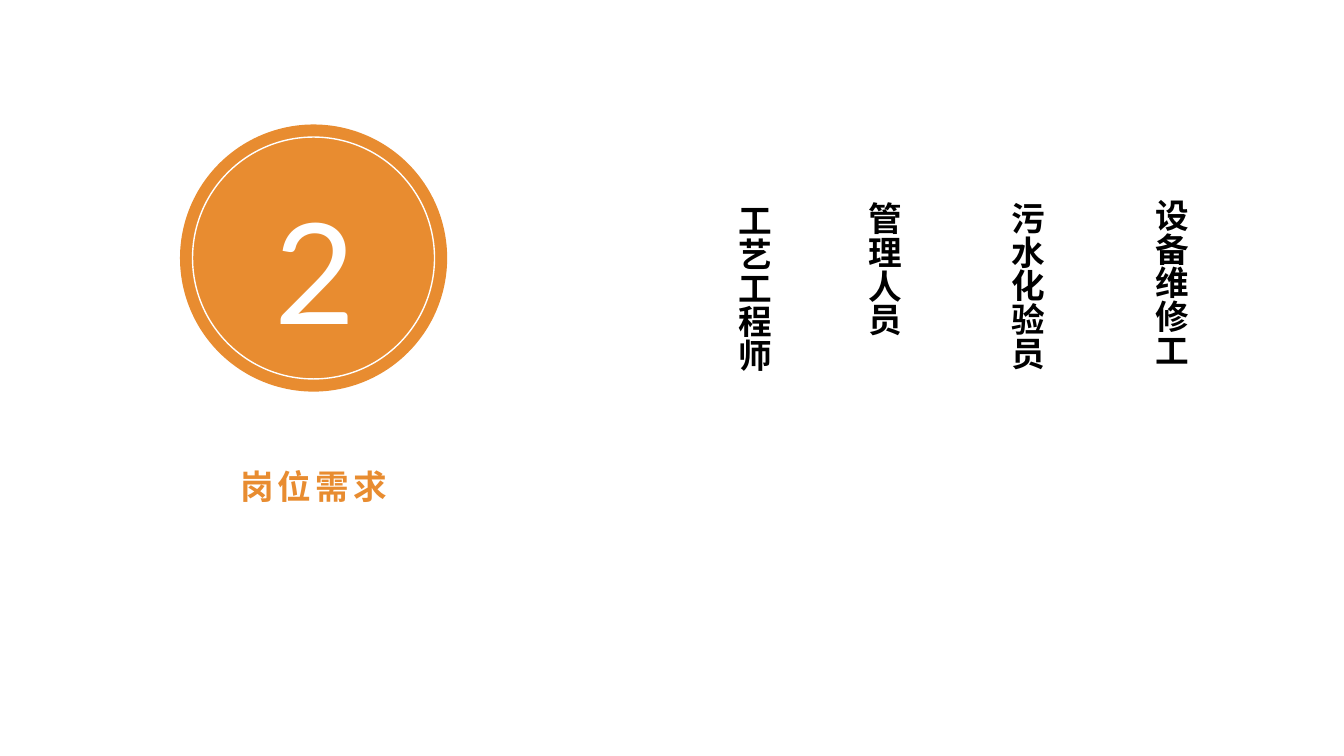
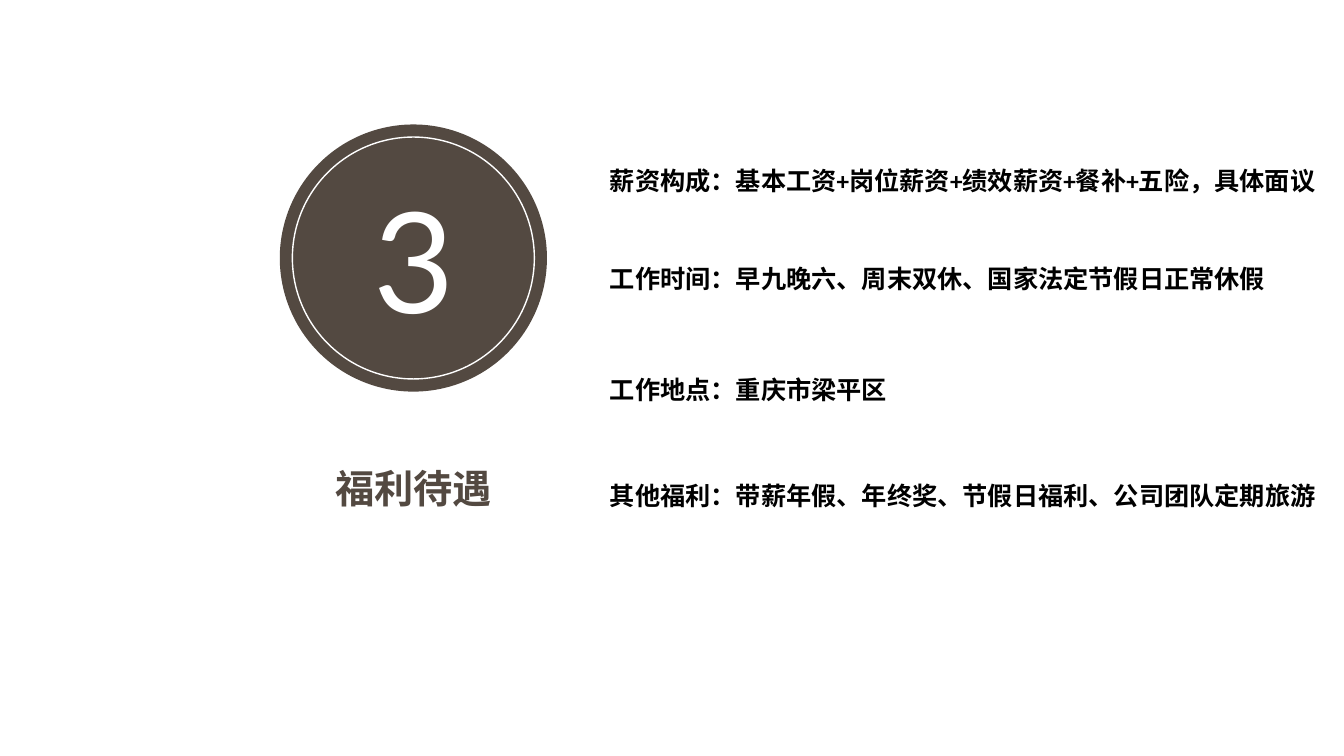
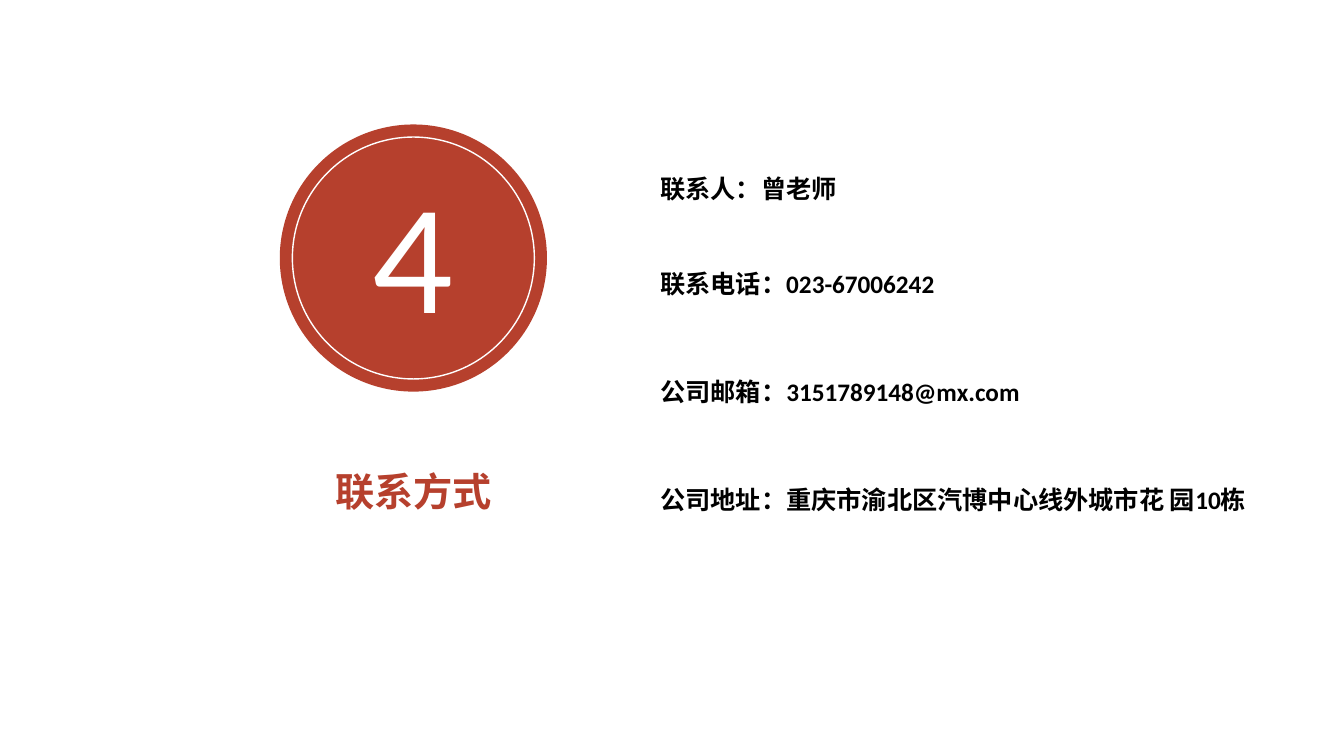
import dataclasses

import lxml.etree
import pptx
import pptx.dml.color
import pptx.enum.lang
import pptx.enum.shapes
import pptx.enum.text
import pptx.oxml.ns
import pptx.util


@dataclasses.dataclass(frozen=True)
class Theme:
    orange: str = "E88C30"
    brown: str = "534941"
    red: str = "B6402D"
    white: str = "FFFFFF"
    black: str = "000000"
    body_font: str = "Calibri"
    number_font: str = "Lato"
    east_asian_font: str = "Calibri"
    number_size: int = 100
    job_size: int = 24
    detail_size: int = 18
    title_spacing: float = 1.23


THEME = Theme()
TITLE_ONLY = 5

# Shared geometry, in inches
SLIDE_WIDTH, SLIDE_HEIGHT = 13.33, 7.5
MEDAL_MIDDLE, MEDAL_SIZE, RING_SIZE = 2.56, 2.65, 2.4
NUMBER_WIDTH, NUMBER_HEIGHT = 0.98, 1.78
TITLE_WIDTH = 4.14
JOB_WIDTH = 0.81
DETAIL_HEIGHT = 0.4

# Content: jobs are (text, left, top, height)
JOBS = [
    ("工艺工程师", 7.12, 1.93, 2.31),
    ("管理人员", 8.41, 1.91, 2.28),
    ("污水化验员", 9.83, 1.91, 2.33),
    ("设备维修工", 11.25, 1.88, 2),
]
# Details are (text, top, width, line spacing)
BENEFITS = [
    ("薪资构成：基本工资+岗位薪资+绩效薪资+餐补+五险，具体面议", 1.35, 7.35, 1.8),
    ("工作时间：早九晚六、周末双休、国家法定节假日正常休假", 2.56, 6.97, 1),
    ("工作地点：重庆市梁平区", 3.66, 4.84, 1),
    ("其他福利：带薪年假、年终奖、节假日福利、公司团队定期旅游", 4.72, 7.26, 1),
]
CONTACTS = [
    ("联系人：曾老师", 1.67, 4.16, 1),
    ("联系电话：023-67006242", 2.61, 3.94, 1),
    ("公司邮箱：3151789148@mx.com", 3.68, 4.61, 1),
    ("公司地址：重庆市渝北区汽博中心线外城市花 园10栋", 4.76, 6.5, 1),
]
SECTIONS = [
    dict(number="2", title="岗位需求", color=THEME.orange, center=3.11, number_top=1.78,
         title_top=4.48, title_height=0.93, title_font="Noto Sans CJK SC",
         title_size=24, tracking=3, jobs=JOBS),
    dict(number="3", title="福利待遇", color=THEME.brown, center=4.1, number_top=1.67,
         title_top=4.45, title_height=0.68, title_font="Arial",
         title_size=28, details=BENEFITS, details_left=5.95),
    dict(number="4", title="联系方式", color=THEME.red, center=4.1, number_top=1.67,
         title_top=4.48, title_height=0.68, title_font="Arial",
         title_size=28, details=CONTACTS, details_left=6.45),
]


def rgb(value):
    return pptx.dml.color.RGBColor.from_string(value)


def inches(*lengths):
    return [pptx.util.Inches(length) for length in lengths]


def write(box, text, font, size, color, bold=True, centered=False,
          spacing=1, wrap=True, vertical=False, tracking=0):
    """Fill a text box or placeholder with one formatted paragraph."""
    frame = box.text_frame
    frame.text = text
    frame.word_wrap = wrap
    frame.auto_size = pptx.enum.text.MSO_AUTO_SIZE.SHAPE_TO_FIT_TEXT
    frame.vertical_anchor = pptx.enum.text.MSO_ANCHOR.TOP
    if vertical:
        frame._txBody.bodyPr.set("vert", "eaVert")
    paragraph = frame.paragraphs[0]
    align = pptx.enum.text.PP_ALIGN
    paragraph.alignment = align.CENTER if centered else align.LEFT
    paragraph.line_spacing = float(spacing)
    run = paragraph.runs[0]
    run.font.name = font
    run.font.size = pptx.util.Pt(size)
    run.font.bold = bold
    run.font.color.rgb = rgb(color)
    run.font.language_id = pptx.enum.lang.MSO_LANGUAGE_ID.SIMPLIFIED_CHINESE
    properties = run._r.get_or_add_rPr()
    lxml.etree.SubElement(properties, pptx.oxml.ns.qn("a:ea"),
                          typeface=THEME.east_asian_font)
    if tracking:
        properties.set("spc", str(tracking * 100))


def add_medal(slide, section):
    """Draw the coloured disc, its white ring and the section number."""
    center = section["center"]
    medal = slide.shapes.add_group_shape()
    for size, outlined in ((MEDAL_SIZE, False), (RING_SIZE, True)):
        disc = medal.shapes.add_shape(
            pptx.enum.shapes.MSO_SHAPE.OVAL,
            *inches(center - size / 2, MEDAL_MIDDLE - size / 2, size, size))
        disc.shadow.inherit = False
        disc.fill.solid()
        disc.fill.fore_color.rgb = rgb(section["color"])
        if outlined:
            disc.line.color.rgb = rgb(THEME.white)
            disc.line.width = pptx.util.Pt(1)
        else:
            disc.line.fill.background()
    number = slide.shapes.add_textbox(*inches(
        center - NUMBER_WIDTH / 2, section["number_top"], NUMBER_WIDTH, NUMBER_HEIGHT))
    write(number, section["number"], THEME.number_font, THEME.number_size,
          THEME.white, bold=False, centered=True, wrap=False)


def add_title(slide, section):
    title = slide.shapes.title
    title.left, title.top, title.width, title.height = inches(
        section["center"] - TITLE_WIDTH / 2, section["title_top"],
        TITLE_WIDTH, section["title_height"])
    write(title, section["title"], section["title_font"], section["title_size"],
          section["color"], centered=True, spacing=THEME.title_spacing,
          tracking=section.get("tracking", 0))


def add_jobs(slide, jobs):
    for text, left, top, height in jobs:
        job = slide.shapes.add_textbox(*inches(left, top, JOB_WIDTH, height))
        write(job, text, THEME.body_font, THEME.job_size, THEME.black,
              spacing=1.5, vertical=True)


def add_details(slide, details, left):
    for text, top, width, spacing in details:
        detail = slide.shapes.add_textbox(*inches(left, top, width, DETAIL_HEIGHT * spacing))
        write(detail, text, THEME.body_font, THEME.detail_size, THEME.black, spacing=spacing)


def main():
    deck = pptx.Presentation()
    deck.slide_width, deck.slide_height = inches(SLIDE_WIDTH, SLIDE_HEIGHT)
    for section in SECTIONS:
        slide = deck.slides.add_slide(deck.slide_layouts[TITLE_ONLY])
        add_medal(slide, section)
        add_title(slide, section)
        add_jobs(slide, section.get("jobs", []))
        add_details(slide, section.get("details", []), section.get("details_left"))
    deck.save("out.pptx")


if __name__ == "__main__":
    main()
